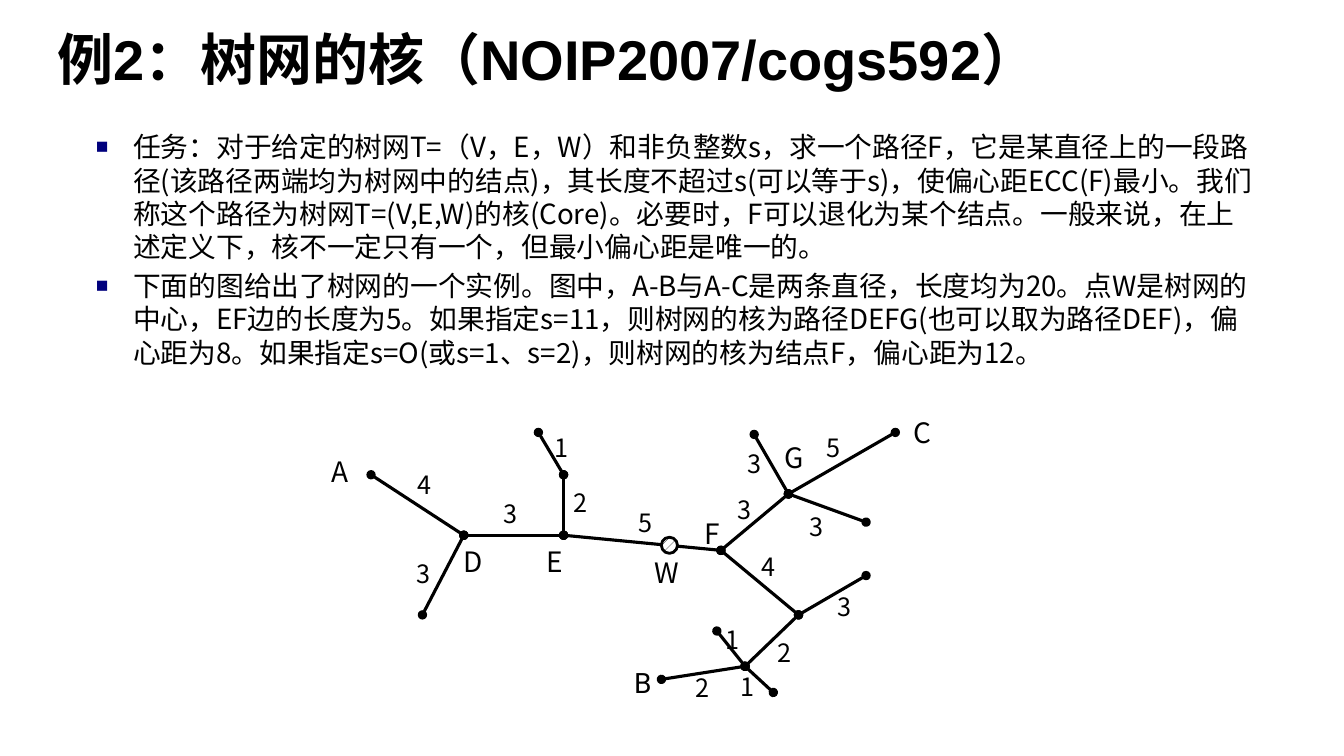
from lxml.etree import SubElement
from pptx import Presentation
from pptx.dml.color import RGBColor
from pptx.enum.dml import MSO_PATTERN
from pptx.enum.shapes import MSO_CONNECTOR, MSO_SHAPE
from pptx.enum.text import MSO_ANCHOR, PP_ALIGN
from pptx.oxml.ns import qn
from pptx.util import Inches, Pt

COLORS = {"ink": "000000", "paper": "FFFFFF", "bullet": "00007D"}
TITLE_FONT, TEXT_FONT, ROOT_FONT = "Arial", "Noto Sans CJK SC", "Roboto"

TITLE = "例2：树网的核（NOIP2007/cogs592）"
TASKS = [
    "任务：对于给定的树网T=（V，E，W）和非负整数s，求一个路径F，它是某直径上的一段路径"
    "(该路径两端均为树网中的结点)，其长度不超过s(可以等于s)，使偏心距ECC(F)最小。"
    "我们称这个路径为树网T=(V,E,W)的核(Core)。必要时，F可以退化为某个结点。"
    "一般来说，在上述定义下，核不一定只有一个，但最小偏心距是唯一的。",
    "下面的图给出了树网的一个实例。图中，A-B与A-C是两条直径，长度均为20。"
    "点W是树网的中心，EF边的长度为5。如果指定s=11，则树网的核为路径DEFG(也可以取为路径DEF)，"
    "偏心距为8。如果指定s=O(或s=1、s=2)，则树网的核为结点F，偏心距为12。",
]

# Positions in inches inside the diagram box
NODES = {
    "A": (0.68, 0.71), "D": (1.6, 1.31), "D leaf": (1.19, 2.1),
    "E": (2.59, 1.31), "E branch": (2.59, 0.71), "E leaf": (2.34, 0.29),
    "F": (4.15, 1.46), "G": (4.82, 0.9), "G upper leaf": (4.48, 0.31),
    "C": (5.88, 0.29), "G lower leaf": (5.59, 1.18),
    "fork": (4.92, 2.1), "fork leaf": (5.59, 1.71),
    "joint": (4.39, 2.61), "B": (3.56, 2.74),
    "joint upper leaf": (4.11, 2.26), "joint lower leaf": (4.67, 2.87),
}
# Ends, weight, left and top of the weight label
EDGES = [
    ("D", "A", 4, 1.04, 0.61), ("D", "D leaf", 3, 1.03, 1.49),
    ("E", "D", 3, 1.9, 0.89), ("E branch", "E", 2, 2.59, 0.79),
    ("E branch", "E leaf", 1, 2.4, 0.24), ("F", "E", 5, 3.23, 0.98),
    ("G", "F", 3, 4.22, 0.85), ("G upper leaf", "G", 3, 4.32, 0.4),
    ("G", "C", 5, 5.1, 0.24), ("G", "G lower leaf", 3, 4.93, 1.02),
    ("fork", "joint", 2, 4.61, 2.27), ("fork", "F", 4, 4.45, 1.42),
    ("fork", "fork leaf", 3, 5.21, 1.82), ("joint", "B", 2, 3.8, 2.62),
    ("joint", "joint upper leaf", 1, 4.1, 2.14),
    ("joint lower leaf", "joint", 1, 4.25, 2.61),
]
NODE_LABELS = {
    "A": (0.19, 0.46), "D": (1.5, 1.35), "E": (2.32, 1.35), "F": (3.89, 1.07),
    "G": (4.68, 0.32), "C": (5.96, 0.07), "W": (3.39, 1.46), "B": (3.19, 2.55),
}
CENTER, CENTER_SIZE = (3.56, 1.33), 0.16


def rgb(name):
    return RGBColor.from_string(COLORS[name])


def place(shape, box):
    shape.left, shape.top, shape.width, shape.height = map(Inches, box)


def style_runs(paragraph, size, font, bold=False):
    """Format every run, with the same East Asian font for all text."""
    for run in paragraph.runs:
        run.font.size, run.font.name, run.font.bold = Pt(size), font, bold
        run.font.color.rgb = rgb("ink")
        SubElement(run.font._element, qn("a:ea"), typeface=TEXT_FONT)


def add_bullet(paragraph):
    properties = paragraph._p.get_or_add_pPr()
    properties.set("marL", str(Inches(0.37)))
    properties.set("indent", str(-Inches(0.37)))
    color = SubElement(properties, qn("a:buClr"))
    SubElement(color, qn("a:srgbClr"), val=COLORS["bullet"])
    SubElement(properties, qn("a:buSzPct"), val="75000")
    SubElement(properties, qn("a:buFont"), typeface=TITLE_FONT)
    SubElement(properties, qn("a:buChar"), char="■")


def write_title(slide, box):
    title = slide.shapes.title
    place(title, box)
    frame = title.text_frame
    frame.text = TITLE
    frame.vertical_anchor = MSO_ANCHOR.MIDDLE
    frame.paragraphs[0].alignment = PP_ALIGN.LEFT
    style_runs(frame.paragraphs[0], 40, TITLE_FONT, bold=True)


def write_tasks(slide, box):
    body = slide.placeholders[1]
    place(body, box)
    frame = body.text_frame
    frame.text = "\n".join(TASKS)
    for index, paragraph in enumerate(frame.paragraphs):
        add_bullet(paragraph)
        paragraph.space_before = Pt(4 if index else 0)
        style_runs(paragraph, 19.8, TEXT_FONT)


def add_edge(shapes, start, end):
    edge = shapes.add_connector(MSO_CONNECTOR.STRAIGHT, *map(Inches, start + end))
    edge.line.color.rgb = rgb("ink")
    edge.line.width = Pt(2.25)
    outline = edge.line._get_or_add_ln()
    for tag in ("a:headEnd", "a:tailEnd"):
        SubElement(outline, qn(tag), type="oval")
    SubElement(edge._element.spPr, qn("a:effectLst"))


def add_label(shapes, text, left, top, size, font=TEXT_FONT):
    label = shapes.add_textbox(*map(Inches, (left, top, 0.41, 0.02 * size + 0.04)))
    frame = label.text_frame
    frame.word_wrap = True
    frame.text = text
    style_runs(frame.paragraphs[0], size, font)


def add_center(shapes, left, top):
    """Mark the centre W of the tree."""
    center = shapes.add_shape(
        MSO_SHAPE.OVAL, *map(Inches, (left, top, CENTER_SIZE, CENTER_SIZE)))
    center.shadow.inherit = False
    center.fill.patterned()
    center.fill.pattern = MSO_PATTERN.PERCENT_20
    center.fill.fore_color.rgb = rgb("ink")
    center.fill.back_color.rgb = rgb("paper")
    center.line.color.rgb = rgb("ink")
    center.line.width = Pt(2)


def draw_tree(slide, left, top):
    shapes = slide.shapes.add_group_shape().shapes

    def at(x, y):
        return left + x, top + y

    for start, end, *_ in EDGES:
        add_edge(shapes, at(*NODES[start]), at(*NODES[end]))
    for _, _, weight, x, y in EDGES:
        add_label(shapes, str(weight), *at(x, y), 18)
    add_center(shapes, *at(*CENTER))
    for name, position in NODE_LABELS.items():
        font = ROOT_FONT if name == "B" else TEXT_FONT
        add_label(shapes, name, *at(*position), 20, font)


def main():
    deck = Presentation()
    deck.slide_width, deck.slide_height = Inches(13.33), Inches(7.5)
    slide = deck.slides.add_slide(deck.slide_layouts[1])
    write_title(slide, (0.47, 0.11, 12.4, 0.94))
    write_tasks(slide, (0.85, 1.24, 11.72, 2.73))
    draw_tree(slide, 3, 4)
    deck.save("out.pptx")


if __name__ == "__main__":
    main()
